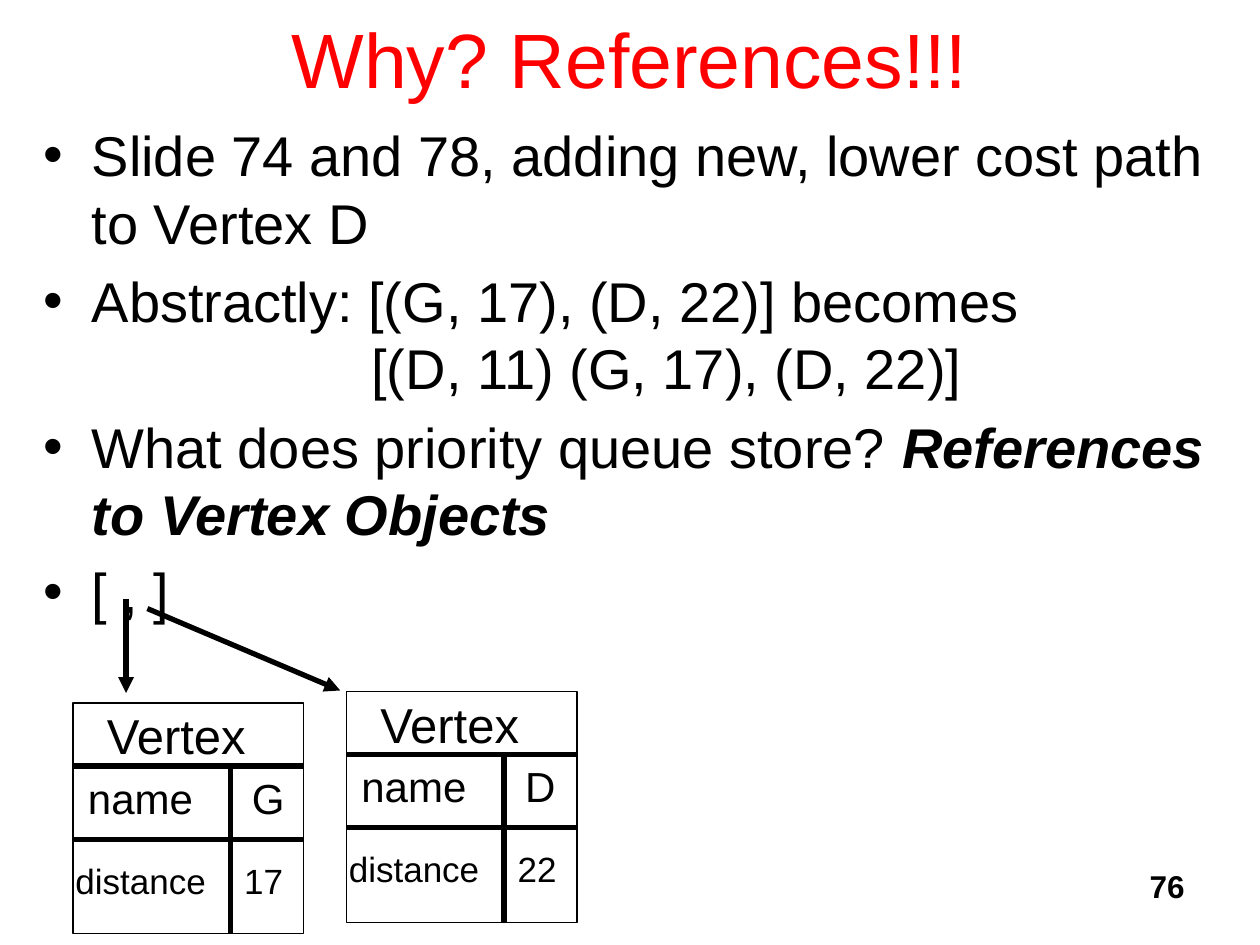
import pptx
import pptx.util
import pptx.dml.color
import pptx.enum.shapes
import pptx.enum.text
import pptx.oxml
import pptx.oxml.ns

Inches = pptx.util.Inches
Pt = pptx.util.Pt
ALIGN = pptx.enum.text.PP_ALIGN
COLORS = {"title": "FF0000", "ink": "000000"}


def color(name):
    return pptx.dml.color.RGBColor.from_string(COLORS[name])


def add_node(parent, tag, **attrs):
    node = pptx.oxml.ns.qn(tag)
    child = parent.makeelement(node, attrs)
    parent.append(child)
    return child


def write(para, text, size=32, ink="ink", bold=False, italic=False,
          align=ALIGN.LEFT, space=0):
    run = para.add_run()
    run.text = text
    font = run.font
    font.name = "Arial"
    font.size = Pt(size)
    font.bold = bold
    font.italic = italic
    font.color.rgb = color(ink)
    para.alignment = align
    para.space_before = Pt(size * space)


def add_box(slide, left, top, width, height, middle=False):
    box = slide.shapes.add_textbox(
        Inches(left), Inches(top), Inches(width), Inches(height))
    frame = box.text_frame
    frame.word_wrap = True
    if middle:
        frame.vertical_anchor = pptx.enum.text.MSO_ANCHOR.MIDDLE
    return frame


def add_label(slide, text, left, top, width, height, middle=False, **form):
    frame = add_box(slide, left, top, width, height, middle)
    write(frame.paragraphs[0], text, **form)
    return frame.paragraphs[0]


def set_tab(para, stop):
    tabs = add_node(para._p.get_or_add_pPr(), "a:tabLst")
    add_node(tabs, "a:tab", pos=str(Inches(stop)), algn="l")


def indent(para, margin, first=0, bullet=False):
    props = para._p.get_or_add_pPr()
    props.set("marL", str(Inches(margin)))
    props.set("indent", str(Inches(first)))
    if bullet:
        add_node(props, "a:buFont", typeface="Arial")
        add_node(props, "a:buChar", char="•")


def add_line(slide, x1, y1, x2, y2, arrow=False):
    line = slide.shapes.add_connector(
        pptx.enum.shapes.MSO_CONNECTOR.STRAIGHT,
        Inches(x1), Inches(y1), Inches(x2), Inches(y2))
    line.line.color.rgb = color("ink")
    line.line.width = Pt(3)
    if arrow:
        add_node(line.line._get_or_add_ln(), "a:tailEnd", type="triangle")
    add_node(line._element.spPr, "a:effectLst")


def add_vertex(slide, left, top, name, cost):
    side = 1.83
    frame = slide.shapes.add_shape(
        pptx.enum.shapes.MSO_SHAPE.RECTANGLE,
        Inches(left), Inches(top), Inches(side), Inches(side))
    frame.shadow.inherit = False
    frame.fill.background()
    frame.line.color.rgb = color("ink")
    frame.line.width = Pt(0.75)

    row = add_label(slide, f"distance\t{cost}", left - 0.08, top + 1.19,
                    2.17, 0.44, size=20, space=0.2)
    set_tab(row, 1.34)
    for drop in (0.5, 1.08):
        add_line(slide, left, top + drop, left + side, top + drop)
    add_line(slide, left + 1.25, top + 0.5, left + 1.25, top + side)
    add_label(slide, "Vertex", left + 0.17, top - 0.03, 1.45, 0.57,
              size=28, space=0.2)
    row = add_label(slide, f"name\t{name}", left + 0.02, top + 0.5,
                    2.06, 0.5, size=24, space=0.2)
    set_tab(row, 1.3)


def add_body(slide):
    frame = add_box(slide, 0.25, 0.91, 9.5, 6)
    items = [
        ("Slide 74 and 78, adding new, lower cost path to Vertex D", "", True),
        ("Abstractly: [(G, 17), (D, 22)] becomes", "", True),
        ("[(D, 11) (G, 17), (D, 22)]", "", False),
        ("What does priority queue store? ", "References to Vertex Objects",
         True),
        ("[ , ]", "", True),
    ]
    for spot, (text, stress, bullet) in enumerate(items):
        para = frame.add_paragraph() if spot else frame.paragraphs[0]
        space = 0.2 if bullet else 0
        write(para, text, space=space)
        if stress:
            write(para, stress, bold=True, italic=True, space=space)
        if bullet:
            indent(para, 0.38, -0.38, bullet=True)
        else:
            indent(para, 2.6)


def main():
    deck = pptx.Presentation()
    deck.slide_width = Inches(10)
    deck.slide_height = Inches(7.5)
    slide = deck.slides.add_slide(deck.slide_layouts[6])

    add_label(slide, "Why? References!!!", 0.75, -0.17, 8.5, 1.25,
              middle=True, size=44, ink="title", align=ALIGN.CENTER)
    add_body(slide)
    add_label(slide, "76", 7.42, 6.83, 2.08, 0.5, size=18, bold=True,
              align=ALIGN.RIGHT)
    add_line(slide, 1, 4.75, 1, 5.5, arrow=True)
    add_line(slide, 1.17, 4.83, 2.7, 5.48, arrow=True)
    add_vertex(slide, 0.58, 5.58, "G", 17)
    add_vertex(slide, 2.75, 5.49, "D", 22)
    deck.save("out.pptx")


if __name__ == "__main__":
    main()
